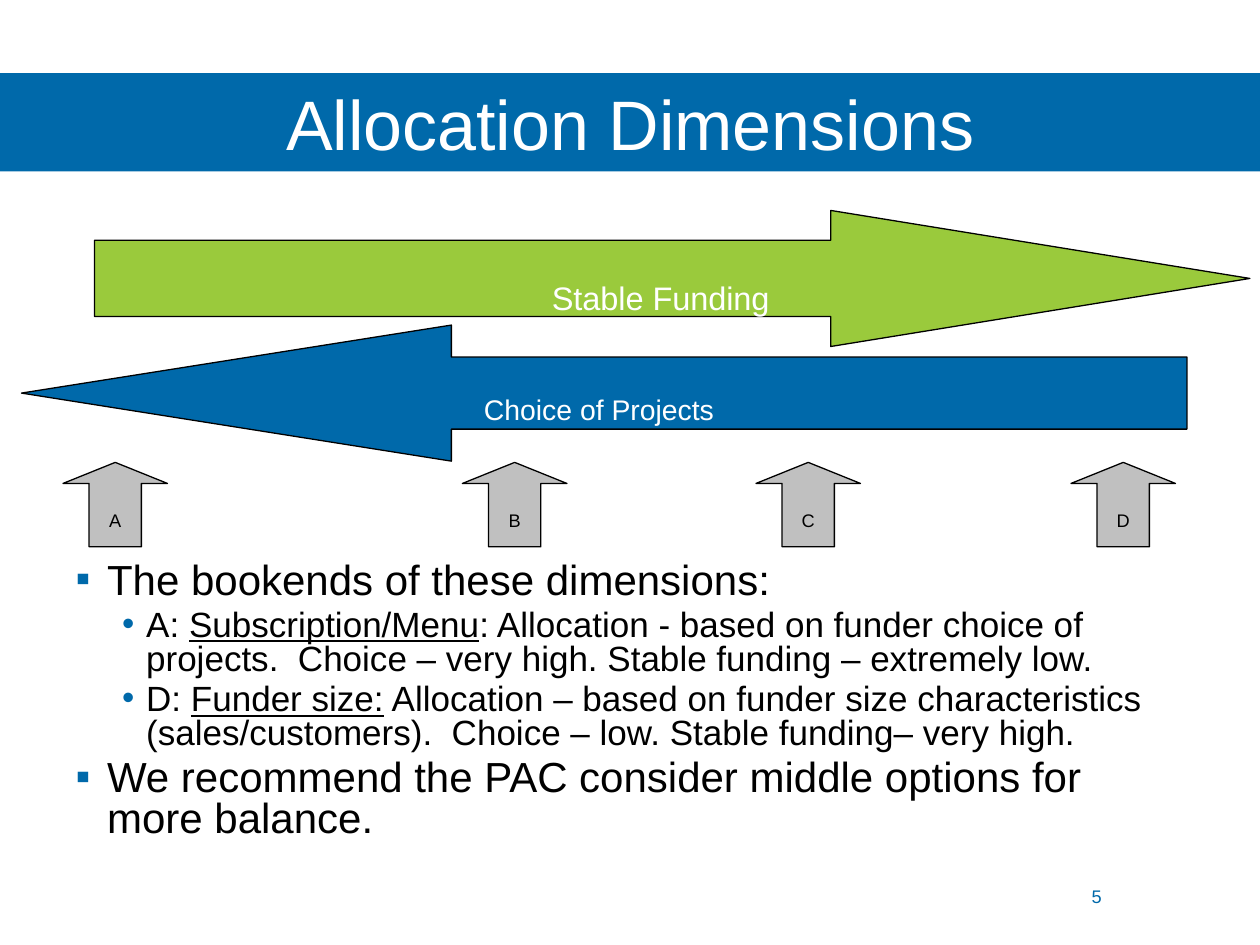
from lxml.etree import SubElement
from pptx import Presentation
from pptx.dml.color import RGBColor
from pptx.enum.shapes import MSO_SHAPE
from pptx.enum.text import MSO_ANCHOR, MSO_AUTO_SIZE, PP_ALIGN
from pptx.oxml.ns import qn
from pptx.util import Inches, Pt

BLUE, GREEN, GRAY = "0069AA", "9ACA3C", "C0C0C0"
BLACK, WHITE = "000000", "FFFFFF"


def paint(text):
    return RGBColor.from_string(text)


class Deck:
    face = "Arial"
    levels = [("▪", 24, 0.25, -0.25), ("•", 20, 0.56, -0.19)]

    def __init__(self):
        self.file = Presentation()
        self.file.slide_width = Inches(10)
        self.file.slide_height = Inches(7.5)
        self.slide = self.file.slides.add_slide(self.file.slide_layouts[1])

    def place(self, shape, box):
        shape.left, shape.top, shape.width, shape.height = map(Inches, box)

    def run(self, para, text, size, color, under=False, low=False):
        run = para.add_run()
        run.text = text
        font = run.font
        font.name, font.size = self.face, Pt(size)
        font.color.rgb = paint(color)
        if under:
            font.underline = True
        if low:
            run._r.get_or_add_rPr().set("baseline", "-25000")

    def line(self, frame, text, size, color, low=False):
        para = frame.paragraphs[0]
        para.alignment = PP_ALIGN.CENTER
        self.run(para, text, size, color, low=low)

    def title(self, box, text):
        shape = self.slide.shapes.title
        self.place(shape, box)
        shape.fill.solid()
        shape.fill.fore_color.rgb = paint(BLUE)
        frame = shape.text_frame
        frame.vertical_anchor = MSO_ANCHOR.MIDDLE
        frame.auto_size = MSO_AUTO_SIZE.NONE
        self.line(frame, text, 40, WHITE)

    def bullets(self, box, items):
        shape = self.slide.placeholders[1]
        self.place(shape, box)
        frame = shape.text_frame
        frame.auto_size = MSO_AUTO_SIZE.NONE
        for spot, (level, parts) in enumerate(items):
            para = frame.add_paragraph() if spot else frame.paragraphs[0]
            mark, size, left, hang = self.levels[level]
            para.level = level
            para.line_spacing = 0.8
            para.space_before = Pt(size * 0.2 if spot else 0)
            props = para._p.get_or_add_pPr()
            props.set("marL", str(Inches(left)))
            props.set("indent", str(Inches(hang)))
            tint = SubElement(props, qn("a:buClr"))
            SubElement(tint, qn("a:srgbClr"), val=BLUE)
            SubElement(props, qn("a:buFont"), typeface=self.face)
            SubElement(props, qn("a:buChar"), char=mark)
            for text, under in parts:
                self.run(para, text, size, BLACK, under)

    def arrow(self, kind, box, shape_adj, fill, text, size, color, pads=(0.1, 0.1)):
        shape = self.slide.shapes.add_shape(kind, *map(Inches, box))
        shape.shadow.inherit = False
        shape.adjustments[0], shape.adjustments[1] = shape_adj
        shape.fill.solid()
        shape.fill.fore_color.rgb = paint(fill)
        shape.line.color.rgb = paint(BLACK)
        shape.line.width = Pt(0.75)
        frame = shape.text_frame
        frame.word_wrap = False
        frame.vertical_anchor = MSO_ANCHOR.MIDDLE
        frame.margin_left, frame.margin_right = map(Inches, pads)
        self.line(frame, text, size, color, low=True)

    def label(self, box, text):
        frame = self.slide.shapes.add_textbox(*map(Inches, box)).text_frame
        frame.word_wrap = True
        self.line(frame, text, 18, BLUE, low=True)


def main():
    deck = Deck()
    deck.label((8.33, 6.81, 0.75, 0.35), "5")
    deck.arrow(MSO_SHAPE.LEFT_ARROW, (0.17, 2.58, 9.25, 1.08), (0.53, 3.16),
               BLUE, "Choice of Projects", 28, WHITE, (0.1, 1.99))
    deck.arrow(MSO_SHAPE.RIGHT_ARROW, (0.75, 1.67, 9.17, 1.08), (0.56, 3.08),
               GREEN, "Stable Funding", 32, WHITE, (1.78, 0.1))
    for name, left in zip("ABCD", (0.5, 3.67, 6, 8.5)):
        deck.arrow(MSO_SHAPE.UP_ARROW, (left, 3.67, 0.83, 0.67), (0.5, 0.25),
                   GRAY, name, 18, BLACK)
    deck.title((0, 0.58, 10, 0.78), "Allocation Dimensions")
    deck.bullets((0.5, 4.42, 9, 2.37), [
        (0, [("The bookends of these dimensions:", False)]),
        (1, [("A: ", False), ("Subscription/Menu", True),
             (": Allocation - based on funder choice of projects.  "
              "Choice – very high. Stable funding – extremely low.", False)]),
        (1, [("D: ", False), ("Funder size:", True),
             (" Allocation – based on funder size characteristics "
              "(sales/customers).  Choice – low. Stable funding– very high.", False)]),
        (0, [("We recommend the PAC consider middle options for more balance.", False)]),
    ])
    deck.file.save("out.pptx")


if __name__ == "__main__":
    main()
